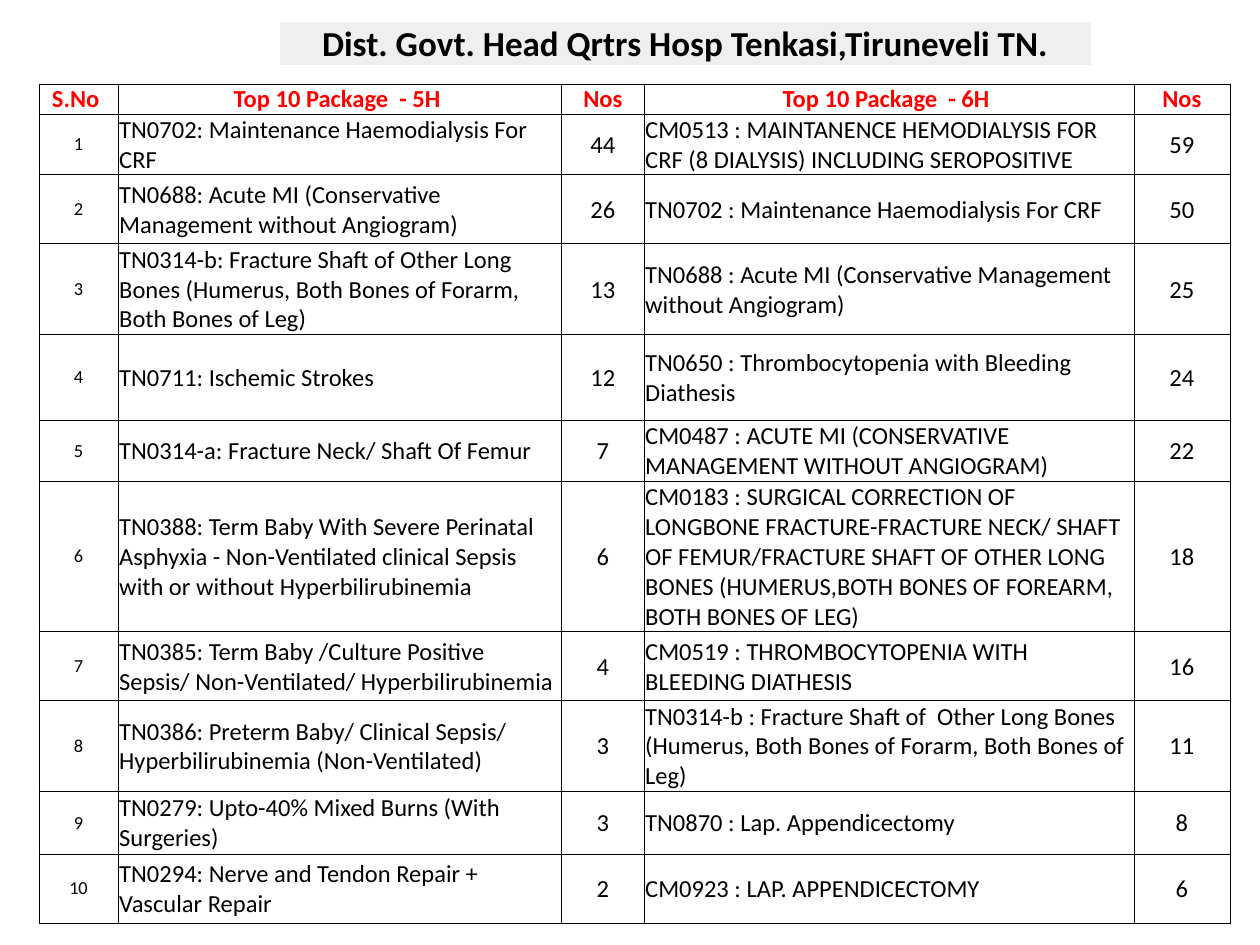
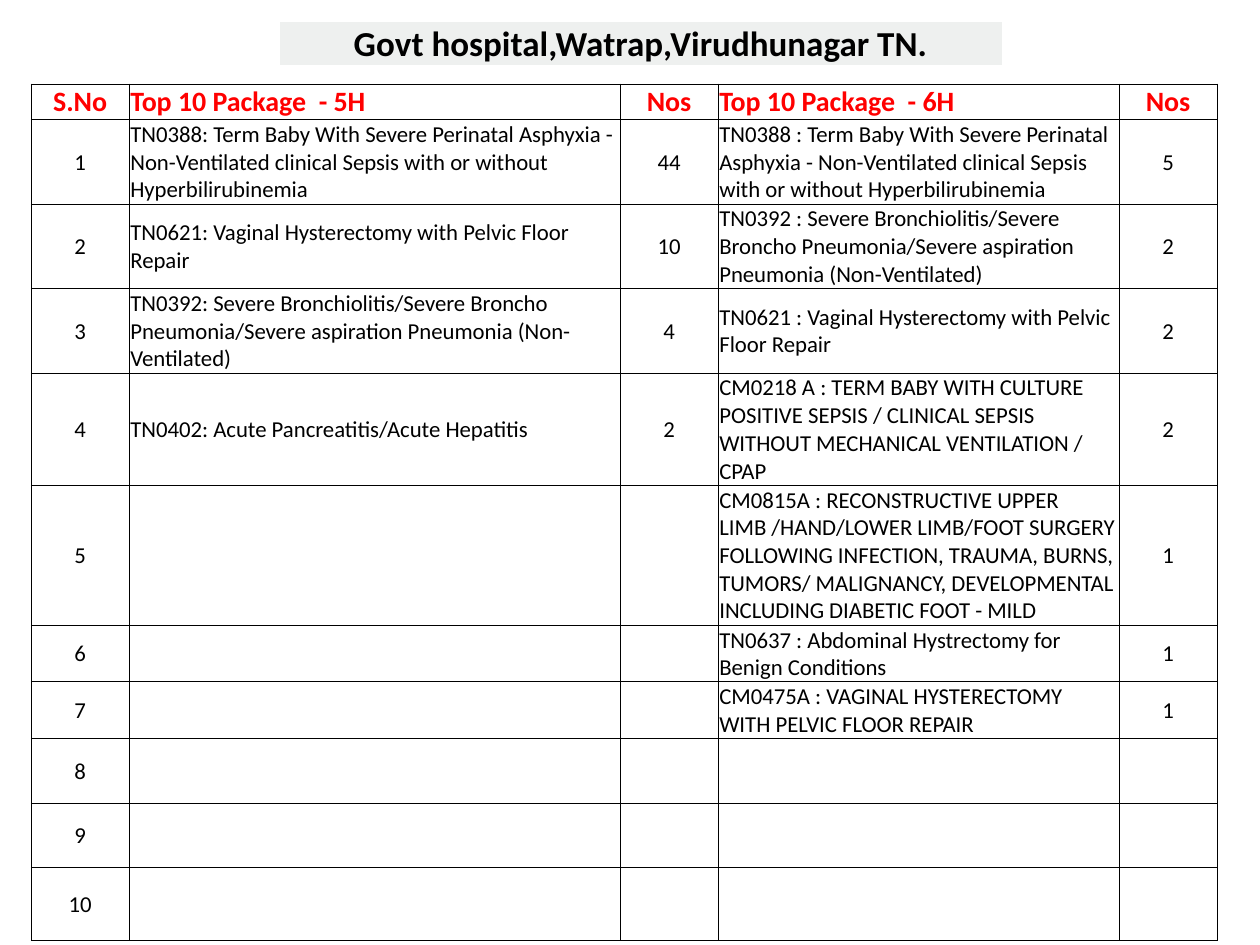
from lxml import etree
from pptx import Presentation
from pptx.dml.color import RGBColor
from pptx.enum import text
from pptx.oxml import ns
from pptx.util import Pt

BLACK = RGBColor(0x00, 0x00, 0x00)
WHITE = RGBColor(0xFF, 0xFF, 0xFF)
RED = RGBColor(0xFF, 0x00, 0x00)
TITLE_BAND = RGBColor(0xEE, 0xF0, 0xEF)
FONT = "Calibri"
INSET = 0.72
MIDDLE = text.MSO_ANCHOR.MIDDLE
BOTTOM = text.MSO_ANCHOR.BOTTOM
CENTER = text.PP_ALIGN.CENTER
LEFT = text.PP_ALIGN.LEFT


def add_grid(s, left, top, widths, heights):
    frame = s.shapes.add_table(len(heights), len(widths), Pt(left), Pt(top),
                               Pt(sum(widths)), Pt(sum(heights)))
    table = frame.table
    table.first_row = False
    table.horz_banding = False
    for column, width in zip(table.columns, widths):
        column.width = Pt(width)
    for row, height in zip(table.rows, heights):
        row.height = Pt(height)
    return table


def style_cell(cell, words, size, color, bold, align, anchor, inset, fill, border, weight):
    tcPr = cell._tc.get_or_add_tcPr()
    for side in ("lnL", "lnR", "lnT", "lnB"):
        ln = etree.SubElement(tcPr, ns.qn("a:" + side), w=str(Pt(weight)))
        solid = etree.SubElement(ln, ns.qn("a:solidFill"))
        etree.SubElement(solid, ns.qn("a:srgbClr"), val=str(border))
    cell.fill.solid()
    cell.fill.fore_color.rgb = fill
    cell.margin_left = cell.margin_right = cell.margin_top = Pt(inset)
    cell.margin_bottom = 0
    cell.vertical_anchor = anchor
    cell.text_frame.text = words
    p = cell.text_frame.paragraphs[0]
    p.alignment = align
    for r in p.runs:
        r.font.name = FONT
        r.font.size = Pt(size)
        r.font.bold = bold
        r.font.color.rgb = color


tenkasi = {
    "title": "Dist. Govt. Head Qrtrs Hosp Tenkasi,Tiruneveli TN.",
    "title_width": 464.4,
    "left": 22.3,
    "widths": [45.1, 253.7, 46.9, 280, 54.9],
    "heights": [17.1, 34.3, 39.4, 51.4, 49.1, 34.3, 84.6, 39.4, 51.4, 36, 39.4],
    "header": ["S.No ", "Top 10 Package  - 5H ", "Nos", "Top 10 Package  - 6H ", "Nos"],
    "header_align": CENTER,
    "header_size": 14,
    "number_size": 10.5,
    "body_size": 14,
    "plain_inset": 0,
    "rows": [
        ("TN0702: Maintenance Haemodialysis For CRF", "44",
         "CM0513 : MAINTANENCE HEMODIALYSIS FOR CRF (8 DIALYSIS) INCLUDING SEROPOSITIVE", "59"),
        ("TN0688: Acute MI (Conservative Management without Angiogram)", "26",
         "TN0702 : Maintenance Haemodialysis For CRF", "50"),
        ("TN0314-b: Fracture Shaft of Other Long Bones (Humerus, Both Bones of Forarm, "
         "Both Bones of Leg)", "13",
         "TN0688 : Acute MI (Conservative Management without Angiogram)", "25"),
        ("TN0711: Ischemic Strokes", "12",
         "TN0650 : Thrombocytopenia with Bleeding Diathesis", "24"),
        ("TN0314-a: Fracture Neck/ Shaft Of Femur", "7",
         "CM0487 : ACUTE MI (CONSERVATIVE MANAGEMENT WITHOUT ANGIOGRAM)", "22"),
        ("TN0388: Term Baby With Severe Perinatal Asphyxia - Non-Ventilated clinical Sepsis "
         "with or without Hyperbilirubinemia", "6",
         "CM0183 : SURGICAL CORRECTION OF LONGBONE FRACTURE-FRACTURE NECK/ SHAFT OF "
         "FEMUR/FRACTURE SHAFT OF OTHER LONG BONES (HUMERUS,BOTH BONES OF FOREARM, "
         "BOTH BONES OF LEG)", "18"),
        ("TN0385: Term Baby /Culture Positive Sepsis/ Non-Ventilated/ Hyperbilirubinemia", "4",
         "CM0519 : THROMBOCYTOPENIA WITH BLEEDING DIATHESIS", "16"),
        ("TN0386: Preterm Baby/ Clinical Sepsis/ Hyperbilirubinemia (Non-Ventilated)", "3",
         "TN0314-b : Fracture Shaft of  Other Long Bones (Humerus, Both Bones of Forarm, "
         "Both Bones of Leg)", "11"),
        ("TN0279: Upto-40% Mixed Burns (With Surgeries)", "3",
         "TN0870 : Lap. Appendicectomy", "8"),
        ("TN0294: Nerve and Tendon Repair + Vascular Repair", "2",
         "CM0923 : LAP. APPENDICECTOMY", "6"),
    ],
}

watrap = {
    "title": "Govt hospital,Watrap,Virudhunagar TN.",
    "title_width": 413.5,
    "left": 17.8,
    "widths": [56, 280.6, 56, 229.1, 56],
    "heights": [19.4, 48, 47.4, 47.4, 63.4, 78.9, 32, 32, 37.1, 36.6, 41.7],
    "header": ["S.No", "Top 10 Package  - 5H", "Nos", "Top 10 Package  - 6H", "Nos"],
    "header_align": LEFT,
    "header_size": 16,
    "number_size": 13,
    "body_size": 13,
    "plain_inset": INSET,
    "rows": [
        ("TN0388: Term Baby With Severe Perinatal Asphyxia - Non-Ventilated clinical Sepsis "
         "with or without Hyperbilirubinemia", "44",
         "TN0388 : Term Baby With Severe Perinatal Asphyxia - Non-Ventilated clinical Sepsis "
         "with or without Hyperbilirubinemia", "5"),
        ("TN0621: Vaginal Hysterectomy with Pelvic Floor Repair", "10",
         "TN0392 : Severe Bronchiolitis/Severe Broncho Pneumonia/Severe aspiration Pneumonia "
         "(Non-Ventilated)", "2"),
        ("TN0392: Severe Bronchiolitis/Severe Broncho Pneumonia/Severe aspiration Pneumonia "
         "(Non-Ventilated)", "4",
         "TN0621 : Vaginal Hysterectomy with Pelvic Floor Repair", "2"),
        ("TN0402: Acute Pancreatitis/Acute Hepatitis", "2",
         "CM0218 A : TERM BABY WITH CULTURE POSITIVE SEPSIS / CLINICAL SEPSIS WITHOUT "
         "MECHANICAL VENTILATION / CPAP", "2"),
        ("", "",
         "CM0815A : RECONSTRUCTIVE UPPER LIMB /HAND/LOWER LIMB/FOOT SURGERY FOLLOWING "
         "INFECTION, TRAUMA, BURNS, TUMORS/ MALIGNANCY, DEVELOPMENTAL INCLUDING DIABETIC "
         "FOOT - MILD", "1"),
        ("", "", "TN0637 : Abdominal Hystrectomy for Benign Conditions", "1"),
        ("", "", "CM0475A : VAGINAL HYSTERECTOMY WITH PELVIC FLOOR REPAIR", "1"),
    ] + [("", "", "", "")] * 3,
}

prs = Presentation()
prs.slide_width = Pt(720)
prs.slide_height = Pt(540)

for hospital in (tenkasi, watrap):
    s = prs.slides.add_slide(prs.slide_layouts[6])
    title = add_grid(s, 159.3, 12.4, [hospital["title_width"]], [24.3])
    style_cell(title.cell(0, 0), hospital["title"], 20, BLACK, True, CENTER, BOTTOM,
               INSET, TITLE_BAND, WHITE, 1)

    packages = add_grid(s, hospital["left"], 48, hospital["widths"], hospital["heights"])
    for col, words in enumerate(hospital["header"]):
        align = hospital["header_align"] if col in (1, 3) else CENTER
        style_cell(packages.cell(0, col), words, hospital["header_size"], RED, True, align,
                   MIDDLE, hospital["plain_inset"], WHITE, BLACK, 0.5)
    for number, row in enumerate(hospital["rows"], 1):
        for col, words in enumerate((str(number), *row)):
            size = hospital["body_size"] if col else hospital["number_size"]
            inset = INSET if col else hospital["plain_inset"]
            align = LEFT if col in (1, 3) else CENTER
            style_cell(packages.cell(number, col), words, size, BLACK, False, align,
                       MIDDLE, inset, WHITE, BLACK, 0.5)

prs.save("out.pptx")
